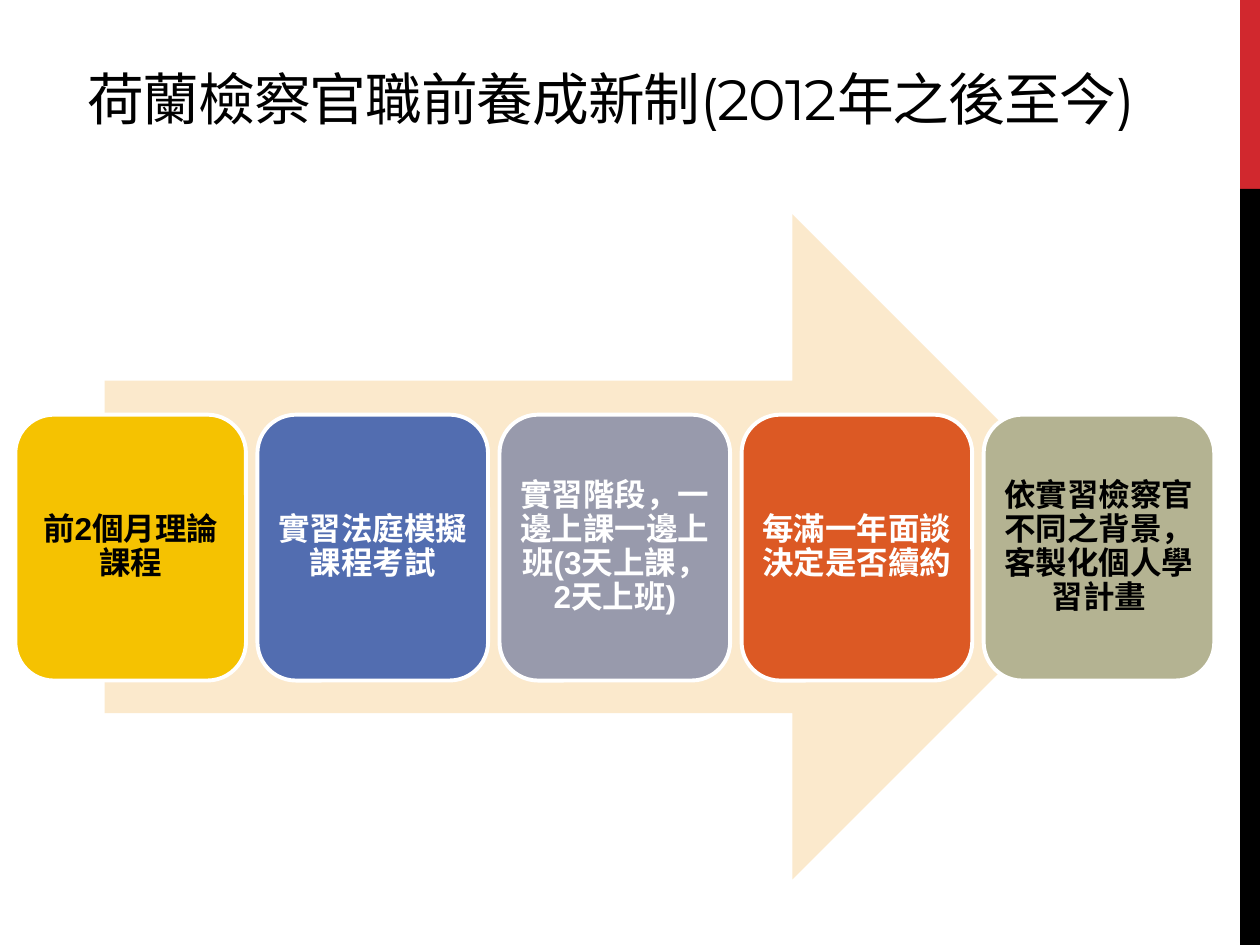
from pptx import Presentation
from pptx.dml.color import RGBColor
from pptx.enum.shapes import MSO_SHAPE
from pptx.enum.text import MSO_ANCHOR, MSO_AUTO_SIZE, PP_ALIGN
from pptx.util import Cm, Pt

RECT = MSO_SHAPE.RECTANGLE
ROUND_RECT = MSO_SHAPE.ROUNDED_RECTANGLE
ARROW = MSO_SHAPE.RIGHT_ARROW
BOTTOM, MIDDLE = MSO_ANCHOR.BOTTOM, MSO_ANCHOR.MIDDLE
LEFT, CENTER = PP_ALIGN.LEFT, PP_ALIGN.CENTER
NO_AUTOFIT = MSO_AUTO_SIZE.NONE

STEPS = [
    ("前2個月理論課程", "F5C201", "000000"),
    ("實習法庭模擬課程考試", "526DB0", "FFFFFF"),
    ("實習階段，一邊上課一邊上班(3天上課，2天上班)", "989AAC", "FFFFFF"),
    ("每滿一年面談決定是否續約", "DC5924", "FFFFFF"),
    ("依實習檢察官不同之背景，客製化個人學習計畫", "B4B392", "000000"),
]
STEP_LEFT, STEP_TOP, STEP_PITCH = 0.31, 8.36, 4.88
STEP_WIDTH, STEP_HEIGHT = 4.65, 5.36


def rgb(color):
    return RGBColor.from_string(color)


def add_filled(shape_type, left, top, width, height, color):
    """Add a borderless, shadowless shape, measured in centimetres."""
    sp = s.shapes.add_shape(shape_type, Cm(left), Cm(top), Cm(width), Cm(height))
    sp.shadow.inherit = False
    sp.fill.solid()
    sp.fill.fore_color.rgb = rgb(color)
    sp.line.fill.background()
    return sp


prs = Presentation()
prs.slide_width, prs.slide_height = Cm(25.4), Cm(19.05)
s = prs.slides.add_slide(prs.slide_layouts[5])

# Side bars
add_filled(RECT, 25, 0, 0.4, 3.81, "D1282E")
add_filled(RECT, 25, 3.81, 0.4, 15.24, "000000")

# Title
title = s.shapes.title
title.left, title.top, title.width, title.height = Cm(1.5), Cm(0.33), Cm(22.43), Cm(3.81)
tf = title.text_frame
tf.word_wrap = True
tf.auto_size = NO_AUTOFIT
tf.vertical_anchor = BOTTOM
tf.margin_top, tf.margin_bottom = 0, Cm(1.49)
p = tf.paragraphs[0]
p.alignment = LEFT
p.line_spacing = 0.82
r = p.add_run()
r.text = "荷蘭檢察官職前養成新制(2012年之後至今)"
r.font.name = "Montserrat"
r.font.size = Pt(32.4)
r.font.color.rgb = rgb("000000")
r.font._element.set("spc", "-60")

# Process arrow with its steps
add_filled(ARROW, 2.11, 4.32, 20.57, 13.41, "FBE9CC")
for i, (text, fill, color) in enumerate(STEPS):
    sp = add_filled(ROUND_RECT, STEP_LEFT + i * STEP_PITCH, STEP_TOP,
                    STEP_WIDTH, STEP_HEIGHT, fill)
    sp.line.color.rgb = rgb("FFFFFF")
    sp.line.width = Pt(2.25)
    tf = sp.text_frame
    tf.word_wrap = True
    tf.vertical_anchor = MIDDLE
    tf.margin_left = tf.margin_right = tf.margin_top = tf.margin_bottom = Cm(0.18)
    p = tf.paragraphs[0]
    p.text = text
    p.alignment = CENTER
    p.line_spacing = 0.9
    p.font.name = "Arial"
    p.font.size = Pt(18)
    p.font.bold = True
    p.font.color.rgb = rgb(color)

prs.save("out.pptx")
